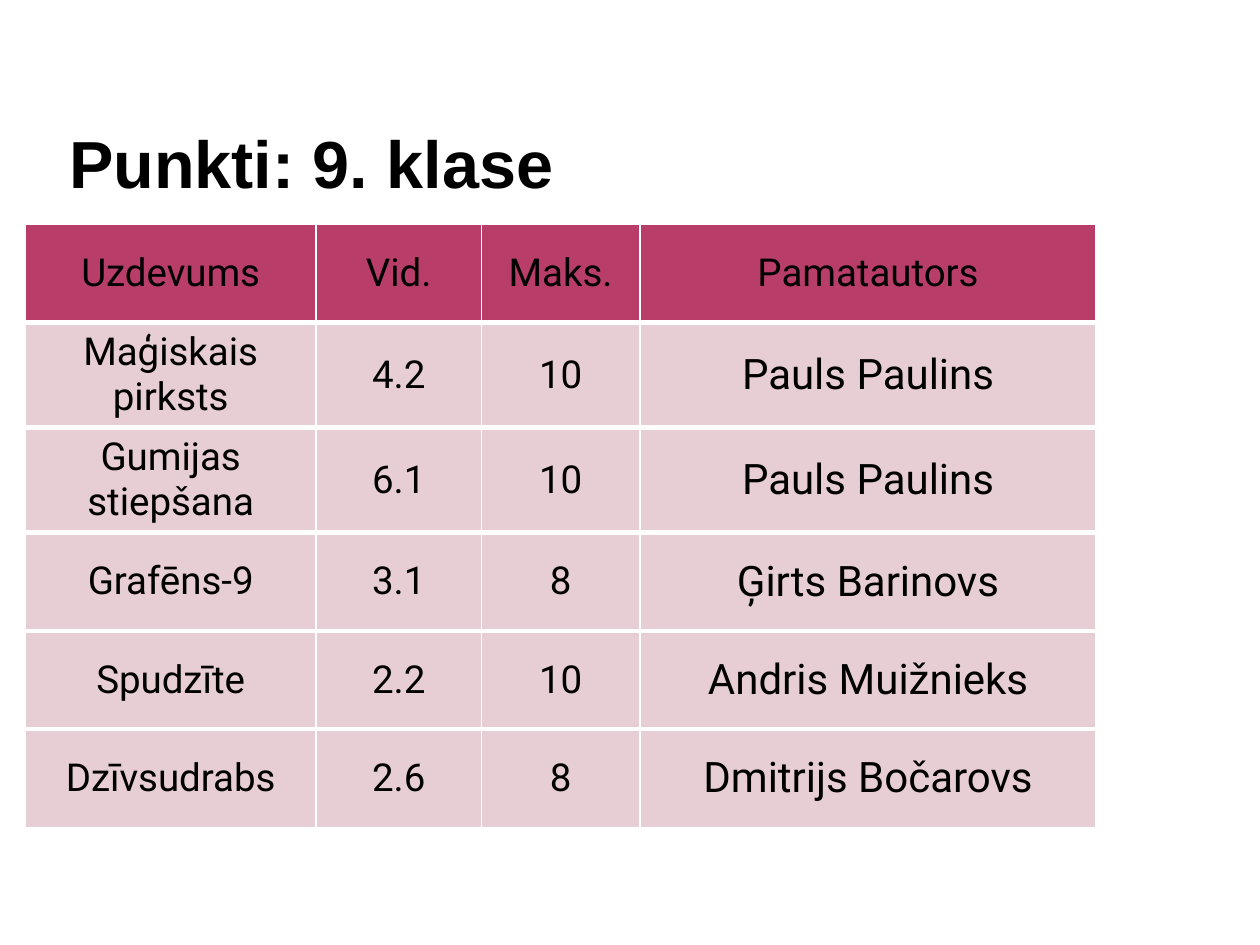
from dataclasses import dataclass
from typing import NamedTuple

from lxml import etree
from pptx import Presentation
from pptx.dml.color import RGBColor
from pptx.enum.text import MSO_ANCHOR, PP_ALIGN
from pptx.oxml.ns import qn
from pptx.util import Inches, Pt

MIDDLE, BOTTOM = MSO_ANCHOR.MIDDLE, MSO_ANCHOR.BOTTOM
CENTER, LEFT = PP_ALIGN.CENTER, PP_ALIGN.LEFT
SLIDE_WIDTH, SLIDE_HEIGHT = Inches(10), Inches(7.5)
BLANK_LAYOUT = 6


@dataclass(frozen=True)
class Theme:
    ink: str = "000000"
    header: str = "B83D68"
    body: str = "E6CED4"
    rule: str = "FFFFFF"
    title_font: str = "Arial"
    table_font: str = "Roboto"
    title_size: int = 38
    table_size: int = 22
    author_size: int = 24
    thin: int = 1
    thick: int = 3


class Task(NamedTuple):
    name: str
    average: str
    maximum: str
    author: str


class Area(NamedTuple):
    left: float
    top: float
    width: float
    height: float

    def lengths(self) -> tuple[int, int, int, int]:
        return (
            int(self.left * SLIDE_WIDTH),
            int(self.top * SLIDE_HEIGHT),
            int(self.width * SLIDE_WIDTH),
            int(self.height * SLIDE_HEIGHT),
        )


THEME = Theme()
HEADINGS = Task("Uzdevums", "Vid.", "Maks.", "Pamatautors")
TASKS = [
    Task("Maģiskais pirksts", "4.2", "10", "Pauls Paulins"),
    Task("Gumijas stiepšana", "6.1", "10", "Pauls Paulins"),
    Task("Grafēns-9", "3.1", "8", "Ģirts Barinovs"),
    Task("Spudzīte", "2.2", "10", "Andris Muižnieks"),
    Task("Dzīvsudrabs", "2.6", "8", "Dmitrijs Bočarovs"),
]
COLUMN_WIDTHS = (2.31, 1.31, 1.26, 3.62)
ROW_HEIGHT = 0.78
AUTHOR_COLUMN = Task._fields.index("author")
TITLE_AREA = Area(0.05, 0.35 / 7.5, 0.79, 1.25 / 7.5)
TABLE_AREA = Area(0.02, 1.78 / 7.5, 0.85, ROW_HEIGHT * (len(TASKS) + 1) / 7.5)


def write(frame, text: str, font: str, size: int, align, bold: bool) -> None:
    paragraph = frame.paragraphs[0]
    paragraph.alignment = align
    run = paragraph.add_run()
    run.text = text
    run.font.name = font
    run.font.size = Pt(size)
    run.font.bold = bold
    run.font.color.rgb = RGBColor.from_string(THEME.ink)


def add_title(slide, text: str) -> None:
    frame = slide.shapes.add_textbox(*TITLE_AREA.lengths()).text_frame
    frame.word_wrap = True
    frame.vertical_anchor = BOTTOM
    frame.margin_left = frame.margin_right = Inches(0.05)
    frame.margin_top = frame.margin_bottom = 0
    write(frame, text, THEME.title_font, THEME.title_size, LEFT, True)


def rule_cell(cell, top: int, bottom: int) -> None:
    properties = cell._tc.get_or_add_tcPr()
    sides = {"a:lnL": THEME.thin, "a:lnR": THEME.thin, "a:lnT": top, "a:lnB": bottom}
    for position, (side, width) in enumerate(sides.items()):
        line = etree.Element(qn(side), w=str(Pt(width)))
        fill = etree.SubElement(line, qn("a:solidFill"))
        etree.SubElement(fill, qn("a:srgbClr"), val=THEME.rule)
        properties.insert(position, line)


def add_scores(slide, rows: list[Task]) -> None:
    table = slide.shapes.add_table(
        len(rows), len(COLUMN_WIDTHS), *TABLE_AREA.lengths()
    ).table
    table.horz_banding = False
    for column, width in zip(table.columns, COLUMN_WIDTHS):
        column.width = Inches(width)
    for row_index, task in enumerate(rows):
        table.rows[row_index].height = Inches(ROW_HEIGHT)
        is_header = row_index == 0
        is_last = row_index == len(rows) - 1
        for column_index, text in enumerate(task):
            cell = table.cell(row_index, column_index)
            cell.vertical_anchor = MIDDLE
            cell.fill.solid()
            cell.fill.fore_color.rgb = RGBColor.from_string(
                THEME.header if is_header else THEME.body
            )
            is_author = column_index == AUTHOR_COLUMN and not is_header
            size = THEME.author_size if is_author else THEME.table_size
            write(cell.text_frame, text, THEME.table_font, size, CENTER, False)
            rule_cell(
                cell,
                THEME.thin if is_header else THEME.thick,
                THEME.thin if is_last else THEME.thick,
            )


def main() -> None:
    presentation = Presentation()
    presentation.slide_width = SLIDE_WIDTH
    presentation.slide_height = SLIDE_HEIGHT
    slide = presentation.slides.add_slide(presentation.slide_layouts[BLANK_LAYOUT])
    add_title(slide, "Punkti: 9. klase")
    add_scores(slide, [HEADINGS, *TASKS])
    presentation.save("out.pptx")


if __name__ == "__main__":
    main()
